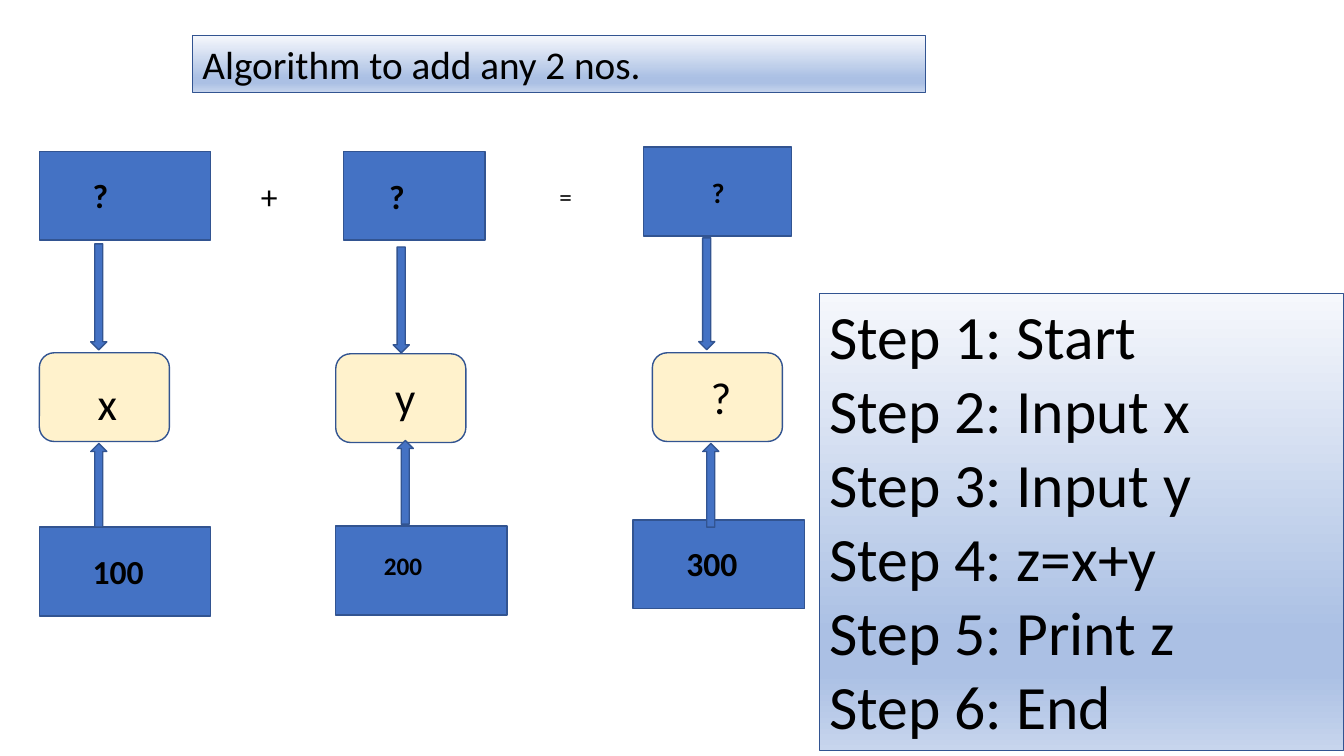
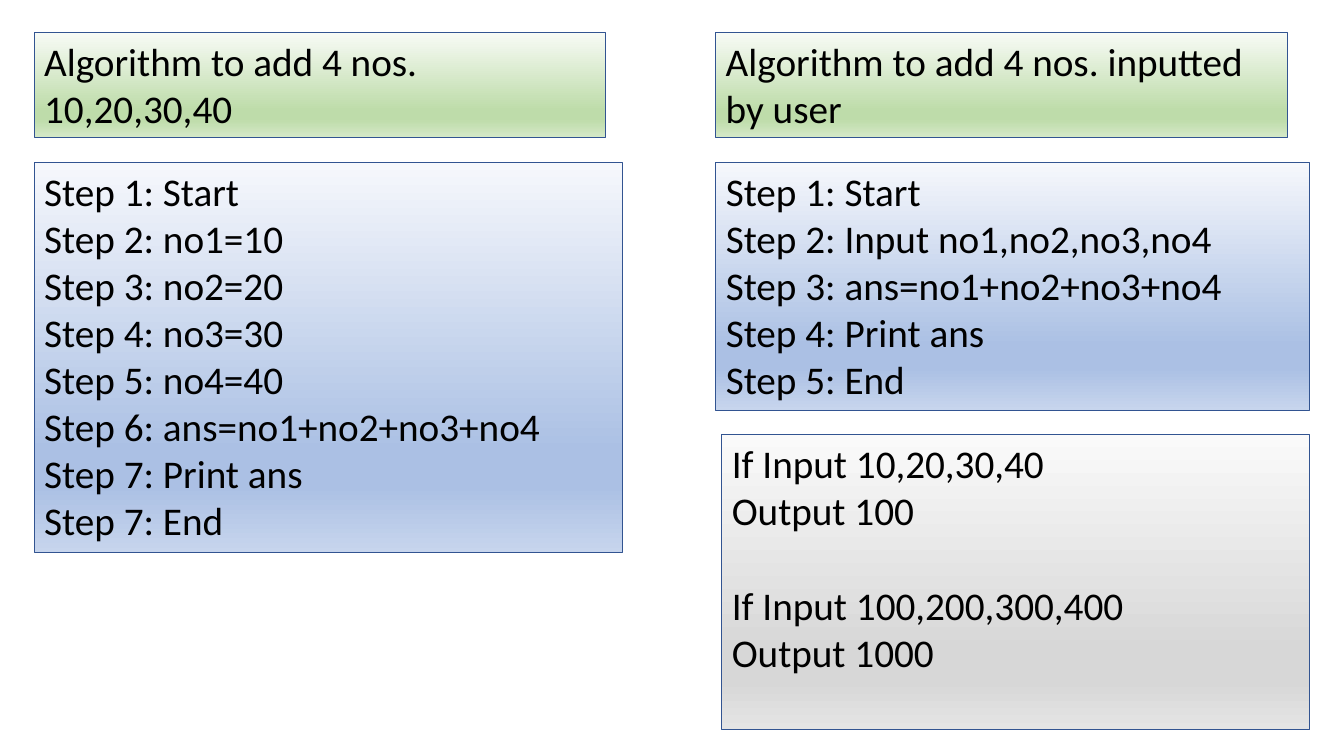
from copy import deepcopy

from pptx import Presentation
from pptx.dml.color import RGBColor
from pptx.enum.shapes import MSO_SHAPE as SHAPE
from pptx.enum.text import MSO_ANCHOR, PP_ALIGN
from pptx.oxml.ns import qn
from pptx.util import Inches, Pt

FONT = "Calibri"
COLORS = {"box": "4472C4", "variable": "FFF2CC", "outline": "325491", "text": "000000"}
GRADIENTS = {
    "blue": ("F6F8FC", "ABC0E4", "ABC0E4", "C7D5ED"),
    "green": ("F8FBF6", "BEDCAA", "BEDCAA", "D4E8C6"),
    "gray": ("FAFAFA", "D7D7D7", "D7D7D7", "E4E4E4"),
}
STOPS = (0, 0.74, 0.83, 1)
BLANK_LINE = 34.2  # height of one 28 pt line, in points

# Preset, fill and outer size of each part; None is set by the column
PARTS = {
    "operand": (SHAPE.RECTANGLE, "box", None, 0.88),
    "down": (SHAPE.DOWN_ARROW, "box", 0.16, None),
    "variable": (SHAPE.ROUNDED_RECTANGLE, "variable", 1.29, 0.88),
    "value": (SHAPE.RECTANGLE, "box", 1.7, 0.88),
    "up": (SHAPE.UP_ARROW, "box", 0.16, 0.83),
}

# part: (left, top[, free size][, label])
# label: (text, left, top, width, size, bold)
COLUMNS = [
    {
        "operand": (0.39, 1.5, 1.7, ("?", 0.82, 1.69, 1.07, 24, True)),
        "down": (0.9, 2.42, 1.05, None),
        "variable": (0.39, 3.5, None, ("x", 0.87, 3.68, 0.85, 32, False)),
        "value": (0.39, 5.23, None, ("100", 0.82, 5.42, 1.07, 24, True)),
        "up": (0.9, 4.4, None, None),
    },
    {
        "operand": (3.41, 1.5, 1.4, ("?", 3.76, 1.7, 0.91, 24, True)),
        "down": (3.9, 2.45, 1.05, None),
        "variable": (3.33, 3.51, None, ("y", 3.82, 3.62, 0.85, 32, False)),
        "value": (3.33, 5.22, None, ("200", 3.71, 5.41, 1.13, 18, True)),
        "up": (3.94, 4.37, None, None),
    },
    {
        "operand": (6.38, 1.46, 1.47, ("?", 6.96, 1.69, 0.71, 20, True)),
        "down": (6.93, 2.36, 1.11, None),
        "variable": (6.47, 3.5, None, ("?", 6.95, 3.62, 0.85, 32, False)),
        "value": (6.28, 5.16, None, ("300", 6.71, 5.34, 1.07, 24, True)),
        "up": (6.97, 4.4, None, None),
    },
]
OPERATORS = [("+", 2.49, 1.7, 0.41, 24, False), ("=", 5.45, 1.75, 0.45, 18, False)]

# Each panel: (gradient, box, size, groups of lines)
SUM_PANELS = [
    ("blue", (1.91, 0.35, 7.27, 0.57), 28, [["Algorithm to add any 2 nos."]]),
    ("blue", (8.13, 2.91, 5.2, 4.54), 44, [[
        "Step 1: Start", "Step 2: Input x", "Step 3: Input y",
        "Step 4: z=x+y", "Step 5: Print z", "Step 6: End",
    ]]),
]
FOUR_NUMBER_PANELS = [
    ("green", (0.34, 0.32, 5.67, 1.04), 28, [["Algorithm to add 4 nos. 10,20,30,40"]]),
    ("blue", (0.34, 1.61, 5.83, 3.87), 28, [[
        "Step 1: Start", "Step 2: no1=10", "Step 3: no2=20", "Step 4: no3=30",
        "Step 5: no4=40", "Step 6: ans=no1+no2+no3+no4", "Step 7: Print ans",
        "Step 7: End",
    ]]),
    ("green", (7.1, 0.32, 5.67, 1.04), 28, [["Algorithm to add 4 nos. inputted by user"]]),
    ("blue", (7.1, 1.61, 5.89, 2.46), 28, [[
        "Step 1: Start", "Step 2: Input no1,no2,no3,no4",
        "Step 3: ans=no1+no2+no3+no4", "Step 4: Print ans", "Step 5: End",
    ]]),
    ("gray", (7.16, 4.31, 5.83, 2.93), 28, [
        ["If Input 10,20,30,40", "Output 100"],
        ["If Input 100,200,300,400", "Output 1000"],
    ]),
]


def rgb(name):
    return RGBColor.from_string(COLORS[name])


def write(frame, groups, size, bold=False):
    """Write one paragraph per line, with a line of space between groups."""
    frame.word_wrap = True
    frame.vertical_anchor = MSO_ANCHOR.TOP
    paragraph = frame.paragraphs[0]
    for group_no, lines in enumerate(groups):
        for line_no, line in enumerate(lines):
            if group_no or line_no:
                paragraph = frame.add_paragraph()
            if group_no and not line_no:
                paragraph.space_before = Pt(BLANK_LINE)
            paragraph.alignment = PP_ALIGN.LEFT
            run = paragraph.add_run()
            run.text = line
            for key, value in {"name": FONT, "size": Pt(size), "bold": bold}.items():
                setattr(run.font, key, value)
            run.font.color.rgb = rgb("text")


def add_outlined(slide, preset, box, line_width):
    shape = slide.shapes.add_shape(preset, *map(Inches, box))
    shape.shadow.inherit = False
    shape.line.color.rgb = rgb("outline")
    shape.line.width = Pt(line_width)
    return shape


def fill_gradient(shape, colors):
    """Fill from top to bottom with one stop per colour."""
    shape.fill.gradient()
    shape.fill.gradient_angle = 270
    stop_list = shape.element.spPr.find(qn("a:gradFill")).find(qn("a:gsLst"))
    while len(stop_list) < len(colors):
        stop_list.append(deepcopy(stop_list[0]))
    for stop, position, color in zip(shape.fill.gradient_stops, STOPS, colors):
        stop.position = position
        stop.color.rgb = RGBColor.from_string(color)


def add_panel(slide, gradient, box, size, groups):
    panel = add_outlined(slide, SHAPE.RECTANGLE, box, 0.75)
    fill_gradient(panel, GRADIENTS[gradient])
    write(panel.text_frame, groups, size)


def add_label(slide, text, left, top, width, size, bold):
    height = size / 60 + 0.1
    label = slide.shapes.add_textbox(*map(Inches, (left, top, width, height)))
    write(label.text_frame, [[text]], size, bold)


def add_column(slide, column):
    for part, (left, top, free_size, label) in column.items():
        preset, color, width, height = PARTS[part]
        box = (left, top, width or free_size, height or free_size)
        shape = add_outlined(slide, preset, box, 1)
        shape.fill.solid()
        shape.fill.fore_color.rgb = rgb(color)
        if label:
            add_label(slide, *label)


def main():
    deck = Presentation()
    deck.slide_width, deck.slide_height = Inches(13.33), Inches(7.5)
    blank = deck.slide_layouts[6]
    sum_slide, four_numbers_slide = (deck.slides.add_slide(blank) for _ in range(2))

    for column in COLUMNS:
        add_column(sum_slide, column)
    for operator in OPERATORS:
        add_label(sum_slide, *operator)
    for slide, panels in ((sum_slide, SUM_PANELS), (four_numbers_slide, FOUR_NUMBER_PANELS)):
        for panel in panels:
            add_panel(slide, *panel)

    deck.save("out.pptx")


if __name__ == "__main__":
    main()
